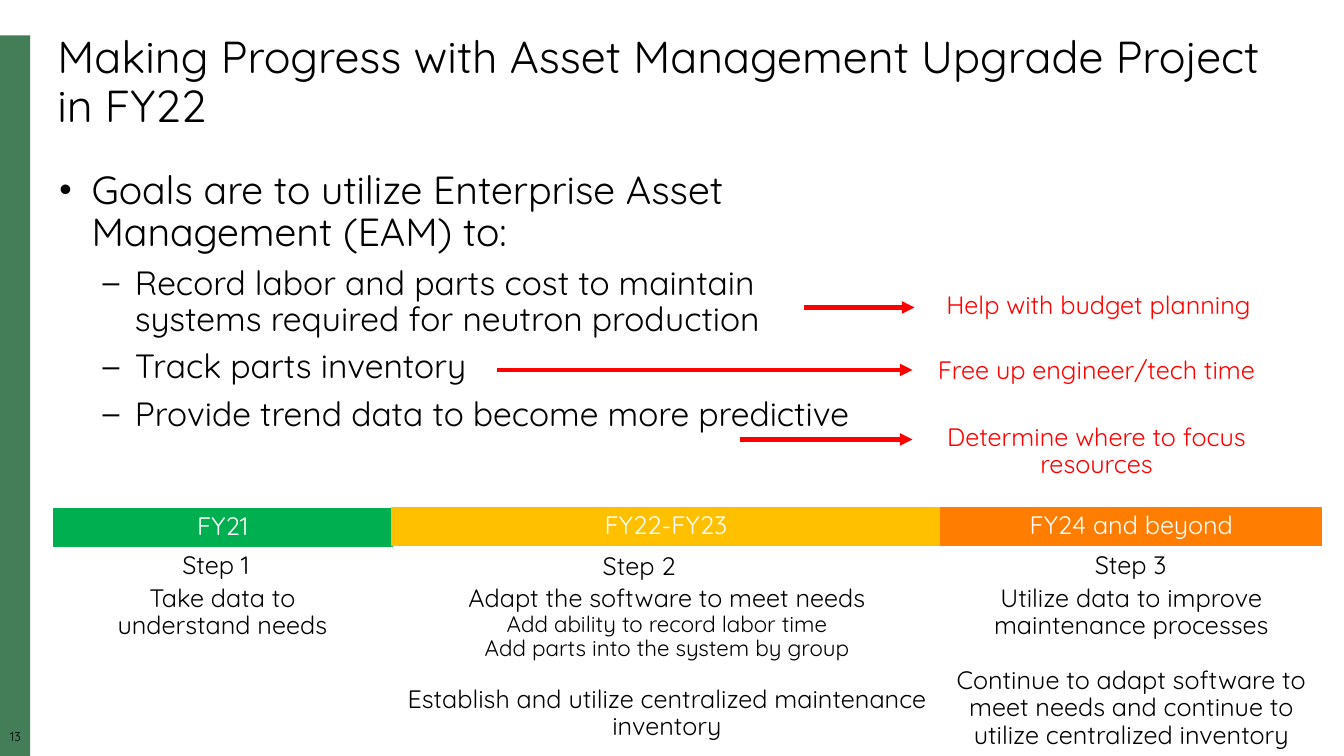
from lxml import etree
from pptx import Presentation
from pptx.dml.color import RGBColor
from pptx.enum.shapes import MSO_CONNECTOR, MSO_SHAPE
from pptx.enum.text import MSO_ANCHOR, PP_ALIGN
from pptx.oxml.ns import qn
from pptx.util import Pt

PX = 9144  # 100 px to the inch
FONT = "Quicksand"
LEFT, CENTER = PP_ALIGN.LEFT, PP_ALIGN.CENTER
TOP, MIDDLE = MSO_ANCHOR.TOP, MSO_ANCHOR.MIDDLE
RECTANGLE, STRAIGHT = MSO_SHAPE.RECTANGLE, MSO_CONNECTOR.STRAIGHT

BLACK = RGBColor(0x00, 0x00, 0x00)
WHITE = RGBColor(0xFF, 0xFF, 0xFF)
RED = RGBColor(0xFF, 0x00, 0x00)
SIDE_GREEN = RGBColor(0x44, 0x7E, 0x59)
GREEN = RGBColor(0x00, 0xB0, 0x50)
YELLOW = RGBColor(0xFF, 0xC0, 0x00)
ORANGE = RGBColor(0xFF, 0x7D, 0x00)

deck = Presentation()
deck.slide_width, deck.slide_height = 1333 * PX, 750 * PX
slide = deck.slides.add_slide(deck.slide_layouts[6])


def write(text, box, size=18, color=BLACK, align=CENTER, fill=None, anchor=TOP,
          inset=(10, 5)):
    """Paragraphs are strings or (text, size, space before, bullet, indent)."""
    place = [n * PX for n in box]
    if fill is None:
        shape = slide.shapes.add_textbox(*place)
    else:
        shape = slide.shapes.add_shape(RECTANGLE, *place)
        shape.shadow.inherit = False
        shape.fill.solid()
        shape.fill.fore_color.rgb = fill
        shape.line.color.rgb = fill
        shape.line.width = Pt(0.75)
    frame = shape.text_frame
    frame.word_wrap = True
    frame.vertical_anchor = anchor
    frame.margin_left = frame.margin_right = inset[0] * PX
    frame.margin_top = frame.margin_bottom = inset[1] * PX
    for i, item in enumerate([text] if isinstance(text, str) else text):
        words, points, before, bullet, indent = (
            (item, size, 0, None, 0) if isinstance(item, str) else item)
        paragraph = frame.add_paragraph() if i else frame.paragraphs[0]
        paragraph.alignment = align
        paragraph.line_spacing = 0.9
        paragraph.space_before = Pt(before)
        if bullet:
            props = paragraph._p.get_or_add_pPr()
            props.set("marL", str(indent * PX))
            props.set("indent", str(-32 * PX))
            etree.SubElement(props, qn("a:buSzPct")).set("val", "90000")
            etree.SubElement(props, qn("a:buFont")).set("typeface", "Arial")
            etree.SubElement(props, qn("a:buChar")).set("char", bullet)
        run = paragraph.add_run()
        run.text = words
        run.font.name = FONT
        run.font.size = Pt(points)
        run.font.color.rgb = color


# Side bar and page number
side_bar = slide.shapes.add_shape(RECTANGLE, 0, 35 * PX, 30 * PX, 715 * PX)
side_bar.shadow.inherit = False
side_bar.fill.solid()
side_bar.fill.fore_color.rgb = SIDE_GREEN
side_bar.line.fill.background()
write("13", (0, 725, 31, 17), size=9, inset=(0, 0))

# Title and goals
write("Making Progress with Asset Management Upgrade Project in FY22",
      (47, 30, 1250, 107), size=32, align=LEFT)
goals = ["Record labor and parts cost to maintain systems required for neutron production",
         "Track parts inventory",
         "Provide trend data to become more predictive"]
write([("Goals are to utilize Enterprise Asset Management (EAM) to:", 28, 0, "•", 32)]
      + [(goal, 24, 8, "–", 75) for goal in goals],
      (49, 164, 815, 443), align=LEFT)

# Benefit of each goal, with its arrow
benefits = [
    ("Help with budget planning", (911, 286, 357, 37), (797, 907, 305)),
    ("Free up engineer/tech time", (905, 350, 365, 37), (493, 905, 367)),
    ("Determine where to focus resources", (907, 416, 361, 65), (734, 905, 436)),
]
for benefit, box, (start, end, y) in benefits:
    write(benefit, box, color=RED)
    arrow = slide.shapes.add_connector(STRAIGHT, start * PX, y * PX, end * PX, y * PX)
    arrow.line.color.rgb = RED
    arrow.line.width = Pt(3)
    etree.SubElement(arrow.line._get_or_add_ln(), qn("a:tailEnd")).set("type", "triangle")
    etree.SubElement(arrow._element.spPr, qn("a:effectLst"))

# Timeline: period bar, step heading, work in the step
steps = [
    ("FY21", GREEN, (53, 505, 336, 37), (171, 543),
     (97, 576, 247, 65), ["Take data to understand needs"]),
    ("FY22-FY23", YELLOW, (388, 504, 545, 37), (588, 544),
     (388, 576, 547, 165),
     ["Adapt the software to meet needs",
      ("Add ability to record labor time", 16, 0, None, 0),
      ("Add parts into the system by group", 16, 0, None, 0),
      ("Establish and utilize centralized maintenance inventory", 18, 18, None, 0)]),
    ("FY24 and beyond", ORANGE, (933, 504, 378, 37), (1076, 543),
     (933, 576, 378, 174),
     ["Utilize data to improve maintenance processes",
      ("Continue to adapt software to meet needs and continue to utilize "
       "centralized inventory", 18, 20, None, 0)]),
]
for number, (period, color, bar, heading, work_box, work) in enumerate(steps, 1):
    write(period, bar, color=WHITE, fill=color, anchor=MIDDLE)
    write(f"Step {number}", (*heading, 96, 37), align=LEFT)
    write(work, work_box)

deck.save("out.pptx")
